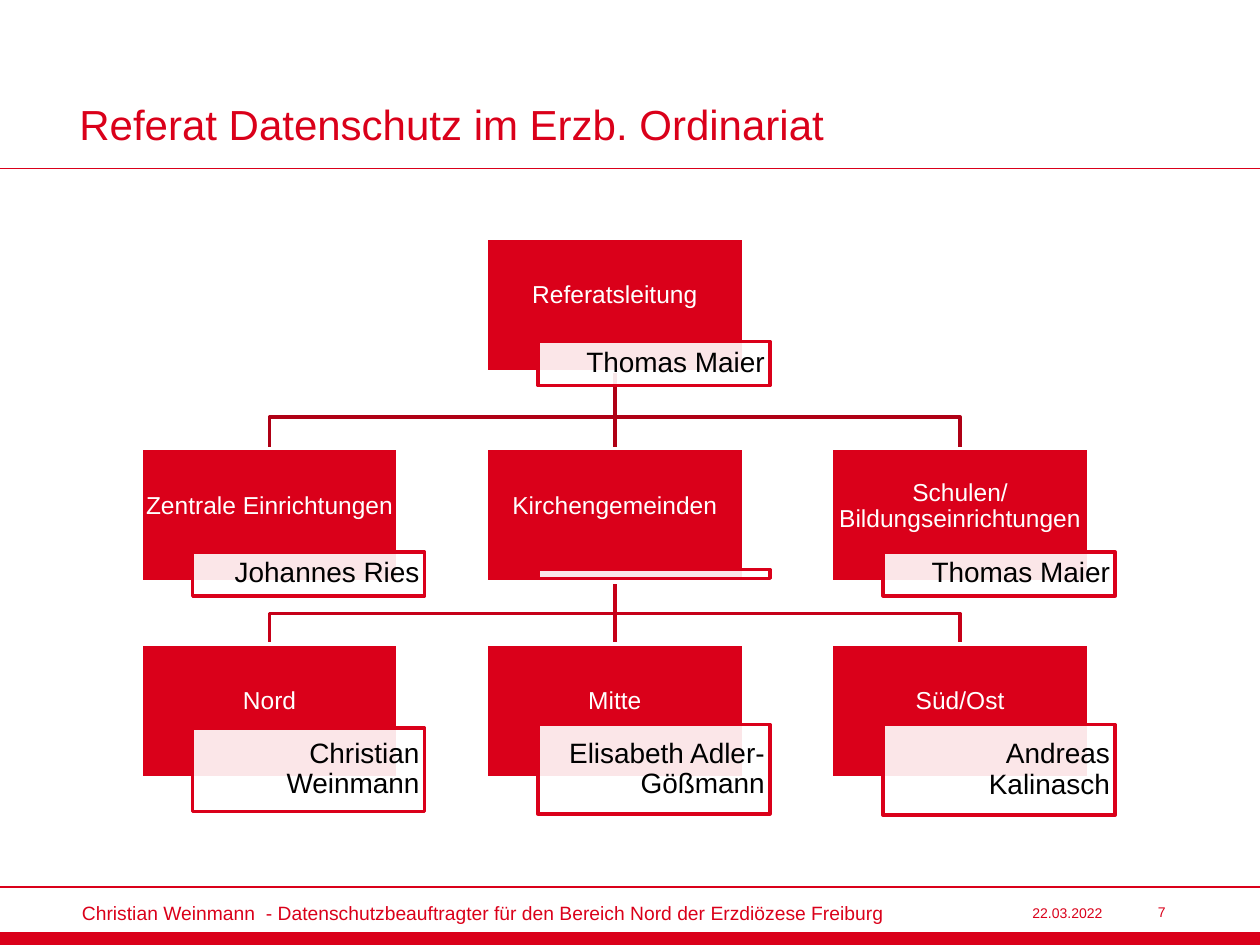
from lxml import etree
from pptx import Presentation
from pptx.dml.color import RGBColor
from pptx.enum.shapes import MSO_CONNECTOR, MSO_SHAPE
from pptx.enum.text import MSO_ANCHOR, PP_ALIGN
from pptx.oxml.ns import qn
from pptx.util import Pt

PX = 9144  # EMU per px, 100 px to the inch
WIDE, HIGH = 1000, 750
FONT = "Arial"
COLORS = {"red": "DA001A", "dark": "AF0015", "mid": "C60018",
          "white": "FFFFFF", "black": "000000"}
RECT, LINE = MSO_SHAPE.RECTANGLE, MSO_CONNECTOR.STRAIGHT
LEFT, MID, RIGHT = PP_ALIGN.LEFT, PP_ALIGN.CENTER, PP_ALIGN.RIGHT
MIDDLE, BOTTOM = MSO_ANCHOR.MIDDLE, MSO_ANCHOR.BOTTOM

BOX_W, BOX_H = 204, 106
COLS = [112 + 274 * i for i in range(3)]
ROWS = [189, 356, 511]
# column, row, unit, person, height of the name tag
UNITS = [
    (1, 0, "Referatsleitung", "Thomas Maier", 35),
    (0, 1, "Zentrale Einrichtungen", "Johannes Ries", 35),
    (1, 1, "Kirchengemeinden", "", 7),
    (2, 1, "Schulen/ Bildungseinrichtungen", "Thomas Maier", 35),
    (0, 2, "Nord", "Christian Weinmann", 66),
    (1, 2, "Mitte", "Elisabeth Adler-Gößmann", 71),
    (2, 2, "Süd/Ost", "Andreas Kalinasch", 72),
]


def emu(*vals):
    return [v * PX for v in vals]


def rgb(name):
    return RGBColor.from_string(COLORS[name])


def write(shape, text, size, color, align, pads, anchor=MIDDLE, wrap=True, gap=None):
    """Fill a shape with one paragraph; pads are left, top, right, bottom."""
    frame = shape.text_frame
    frame.text = text
    frame.word_wrap = wrap
    frame.vertical_anchor = anchor
    (frame.margin_left, frame.margin_top,
     frame.margin_right, frame.margin_bottom) = emu(*pads)
    para = frame.paragraphs[0]
    para.alignment = align
    para.line_spacing = gap
    for run in para.runs:
        run.font.name = FONT
        run.font.size = Pt(size)
        run.font.color.rgb = rgb(color)


def label(slide, box, *args, **opts):
    write(slide.shapes.add_textbox(*emu(*box)), *args, **opts)


def block(slide, box, fill, edge, width):
    shape = slide.shapes.add_shape(RECT, *emu(*box))
    shape.shadow.inherit = False
    shape.fill.solid()
    shape.fill.fore_color.rgb = rgb(fill)
    shape.line.color.rgb = rgb(edge)
    shape.line.width = Pt(width)
    return shape


def rule(slide, ends, color, width):
    line = slide.shapes.add_connector(LINE, *emu(*ends))
    line.line.color.rgb = rgb(color)
    line.line.width = Pt(width)
    etree.SubElement(line._element.spPr, qn("a:effectLst"))


def elbow(slide, points, color):
    build = slide.shapes.build_freeform(*points[0], scale=PX)
    build.add_line_segments(points[1:], close=False)
    shape = build.convert_to_shape()
    shape.shadow.inherit = False
    shape.fill.background()
    shape.line.color.rgb = rgb(color)
    shape.line.width = Pt(2)


def fork(slide, top, bend, end, color):
    """Link the middle column at top to all three columns at end."""
    left, mid, right = [x + BOX_W // 2 for x in COLS]
    for x in (left, right):
        elbow(slide, [(mid, top), (mid, bend), (x, bend), (x, end)], color)
    rule(slide, (mid, top, mid, end), color, 2)


def unit(slide, box, name, person, tall):
    """Red unit box with a name tag centred near its lower edge."""
    x, y, _, _ = box
    write(block(slide, box, "red", "white", 2), name, 14, "white", MID,
          (1, 1, 1, 15), gap=0.9)
    tag = block(slide, (x + 41, y + 100 - (tall + 1) // 2, 184, tall),
                "white", "red", 2)
    tint = tag.fill._xPr.find(".//" + qn("a:srgbClr"))
    etree.SubElement(tint, qn("a:alpha"), val="90000")
    if person:
        write(tag, person, 16, "black", RIGHT, (4, 1, 4, 1), gap=0.9)


def chart(slide):
    fork(slide, ROWS[0] + BOX_H, 331, ROWS[1], "dark")
    fork(slide, ROWS[1] + BOX_H, 487, ROWS[2], "mid")
    for col, row, name, person, tall in UNITS:
        unit(slide, (COLS[col], ROWS[row], BOX_W, BOX_H), name, person, tall)


def header(slide):
    rule(slide, (0, 134, WIDE, 134), "red", 0.75)
    label(slide, (63, 20, 769, 98), "Referat Datenschutz im Erzb. Ordinariat",
          24, "red", LEFT, (0, 5, 10, 0), anchor=BOTTOM)


def footer(slide):
    block(slide, (0, 740, WIDE, 10), "red", "red", 0.75)
    rule(slide, (0, 704, WIDE, 704), "red", 0.75)
    label(slide, (65, 710, 651, 29),
          "Christian Weinmann  - Datenschutzbeauftragter für den Bereich Nord "
          "der Erzdiözese Freiburg", 11, "red", LEFT, (0, 5, 10, 5), wrap=False)
    pads = (10, 5, 10, 5)
    label(slide, (711, 713, 174, 23), "22.03.2022", 8, "red", RIGHT, pads)
    label(slide, (885, 711, 50, 25), "7", 8, "red", RIGHT, pads)


def main():
    deck = Presentation()
    deck.slide_width, deck.slide_height = emu(WIDE, HIGH)
    slide = deck.slides.add_slide(deck.slide_layouts[6])
    header(slide)
    chart(slide)
    footer(slide)
    deck.save("out.pptx")


if __name__ == "__main__":
    main()
